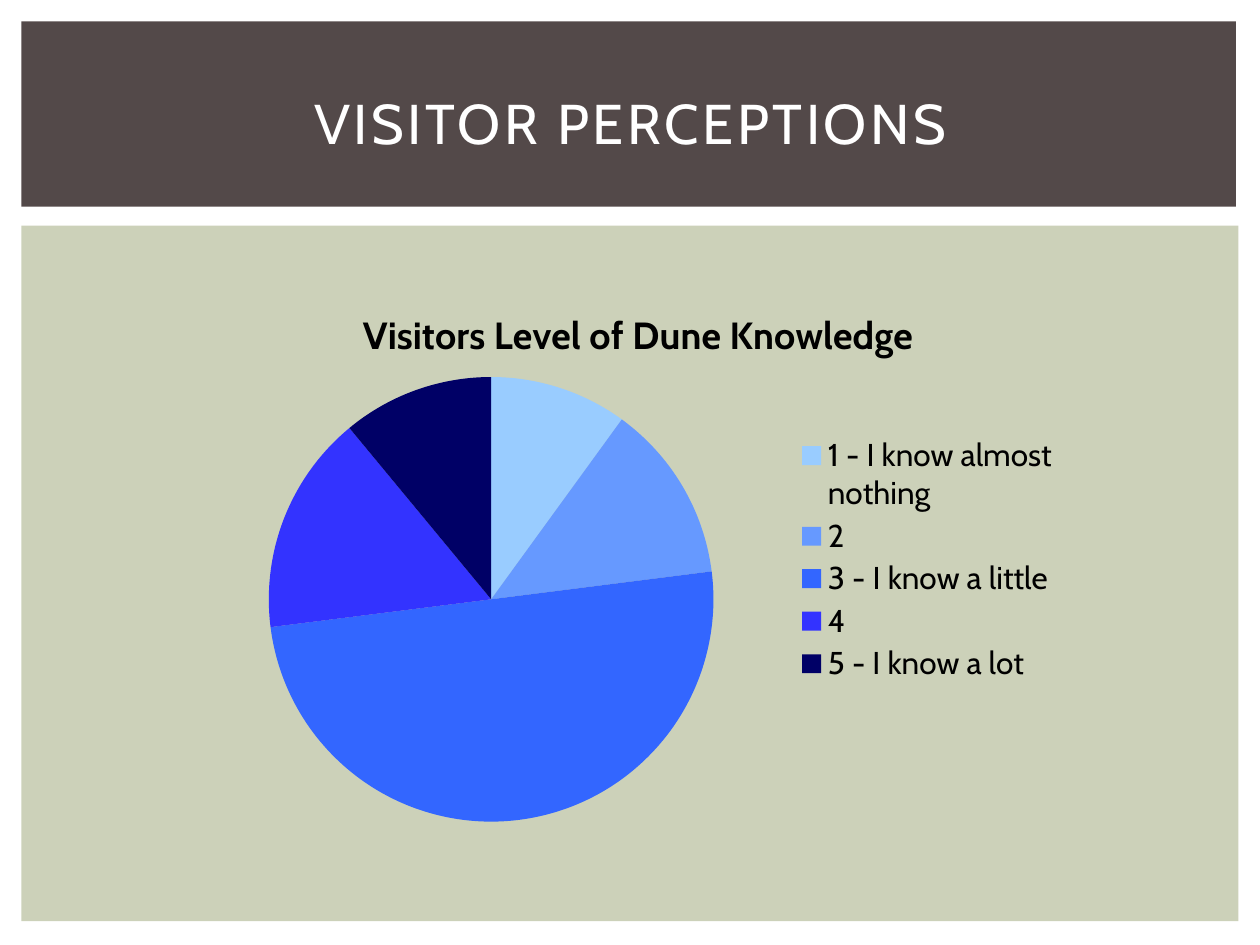
"""Build the visitor perceptions slide with its pie chart."""
from lxml import etree
from pptx import Presentation, util as u
from pptx.chart.data import CategoryChartData
from pptx.dml.color import RGBColor
from pptx.enum import chart as charts, shapes, text
from pptx.oxml.ns import qn

FONT = "Cabin"
WHITE = RGBColor(0xFF, 0xFF, 0xFF)
BLACK = RGBColor(0, 0, 0)
BROWN = RGBColor(0x53, 0x49, 0x49)
SAGE = RGBColor(0xCC, 0xD1, 0xB9)

TITLE = "VISITOR PERCEPTIONS"
TITLE_BOX = (0.42, 0.39, 9.17, 1.15)
PANELS = [((0.17, 1.79, 9.66, 5.52), SAGE), ((0.17, 0.17, 9.64, 1.47), BROWN)]
CHART_BOX = (1.58, 2.17, 6.92, 4.5)
CHART_TITLE = "Visitors Level of Dune Knowledge"
SLICES = [
    ("1 - I know almost nothing", 10, RGBColor(0x99, 0xCC, 0xFF)),
    ("2", 13, RGBColor(0x66, 0x99, 0xFF)),
    ("3 - I know a little", 50, RGBColor(0x33, 0x66, 0xFF)),
    ("4", 16, RGBColor(0x33, 0x33, 0xFF)),
    ("5 - I know a lot", 11, RGBColor(0, 0, 0x66)),
]
PLOT_LAYOUT = {"layoutTarget": "inner", "xMode": "edge", "yMode": "edge",
               "x": 0.08, "y": 0.18, "w": 0.51, "h": 0.79}
LEGEND_LAYOUT = {"xMode": "edge", "yMode": "edge",
                 "x": 0.68, "y": 0.28, "w": 0.31, "h": 0.45}
TITLE_LAYOUT = {"xMode": "edge", "yMode": "edge", "x": 0.18, "y": 0.05}


def inches(box):
    return [u.Inches(value) for value in box]


def set_format(target, values):
    for name, value in values.items():
        setattr(target, name, value)


def set_font(font, size, color, bold=False):
    set_format(font, {"name": FONT, "size": u.Pt(size), "bold": bold})
    font.color.rgb = color


def set_layout(element, values, before):
    for old in element.findall(qn("c:layout")):
        element.remove(old)
    layout = etree.Element(qn("c:layout"))
    manual = etree.SubElement(layout, qn("c:manualLayout"))
    for name, value in values.items():
        etree.SubElement(manual, qn(f"c:{name}")).set("val", str(value))
    following = next(child for child in element if child.tag in map(qn, before))
    following.addprevious(layout)


def add_panel(slide, box, color):
    panel = slide.shapes.add_shape(shapes.MSO_SHAPE.RECTANGLE, *inches(box))
    panel.shadow.inherit = False
    panel.fill.solid()
    panel.fill.fore_color.rgb = color
    panel.line.fill.background()
    slide.shapes._spTree.insert(2 + PANELS.index((box, color)), panel._element)


def add_title(slide):
    title = slide.shapes.title
    set_format(title, dict(zip(("left", "top", "width", "height"), inches(TITLE_BOX))))
    set_format(title.text_frame, {"text": TITLE, "word_wrap": True,
                                  "vertical_anchor": text.MSO_ANCHOR.MIDDLE})
    paragraph = title.text_frame.paragraphs[0]
    paragraph.alignment = text.PP_ALIGN.CENTER
    run = paragraph.runs[0]
    set_font(run.font, 32, WHITE)
    run._r.get_or_add_rPr().set("spc", "200")


def add_pie(slide):
    data = CategoryChartData()
    data.categories = [label for label, _, _ in SLICES]
    data.add_series("Series 1", [value for _, value, _ in SLICES])
    chart = slide.shapes.add_chart(
        charts.XL_CHART_TYPE.PIE, *inches(CHART_BOX), data).chart
    set_font(chart.font, 18, BLACK)
    set_format(chart, {"has_title": True, "has_legend": True})
    frame = chart.chart_title.text_frame
    frame.text = CHART_TITLE
    set_font(frame.paragraphs[0].runs[0].font, 21.6, BLACK, bold=True)
    set_format(chart.legend, {"position": charts.XL_LEGEND_POSITION.RIGHT,
                              "include_in_layout": False})
    set_font(chart.legend.font, 18, BLACK)
    plot = chart.plots[0]
    plot.vary_by_categories = True
    for index, (_, _, color) in enumerate(SLICES):
        fill = plot.series[0].points[index].format.fill
        fill.solid()
        fill.fore_color.rgb = color
    set_layout(chart._chartSpace.chart.plotArea, PLOT_LAYOUT, ["c:pieChart"])
    set_layout(chart.legend._element, LEGEND_LAYOUT, ["c:overlay"])
    set_layout(chart.chart_title._element, TITLE_LAYOUT, ["c:overlay"])


def main():
    presentation = Presentation()
    set_format(presentation, {"slide_width": u.Inches(10), "slide_height": u.Inches(7.5)})
    slide = presentation.slides.add_slide(presentation.slide_layouts[5])
    for box, color in PANELS:
        add_panel(slide, box, color)
    add_title(slide)
    add_pie(slide)
    presentation.save("out.pptx")


if __name__ == "__main__":
    main()
